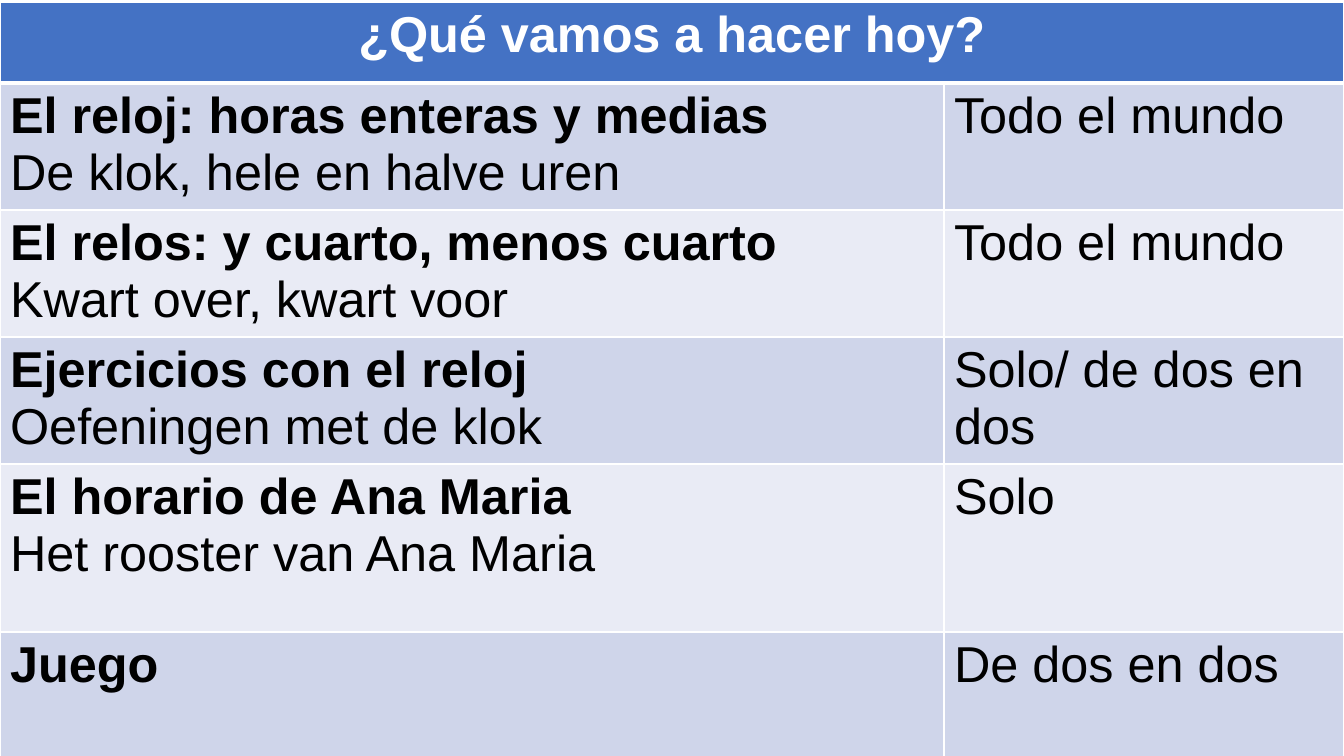
from lxml import etree
from pptx import Presentation
from pptx.dml.color import RGBColor
from pptx.enum.text import PP_ALIGN
from pptx.oxml.ns import qn
from pptx.util import Pt

CENTER, LEFT = PP_ALIGN.CENTER, PP_ALIGN.LEFT
PX = 9525  # EMU per px, 96 px to the inch
SLIDE_WIDTH, SLIDE_HEIGHT = 1280, 720
BLANK_LAYOUT = 6

WHITE, BLACK = "FFFFFF", "000000"
HEADER_FILL = "4472C4"
BAND_FILLS = ("CFD5EA", "E9EBF5")
THIN, THICK = 1, 3  # border widths in points

COLUMN_WIDTHS = (899, 381)
ROW_HEIGHTS = (77, 121, 121, 121, 160, 150)
TABLE_TOP = 2

HEADING = "¿Qué vamos a hacer hoy?"
# Spanish activity, Dutch translation, who takes part
ACTIVITIES = (
    ("El reloj: horas enteras y medias", "De klok, hele en halve uren", "Todo el mundo"),
    ("El relos: y cuarto, menos cuarto", "Kwart over, kwart voor", "Todo el mundo"),
    ("Ejercicios con el reloj", "Oefeningen met de klok", "Solo/ de dos en dos"),
    ("El horario de Ana Maria", "Het rooster van Ana Maria", "Solo"),
    ("Juego", None, "De dos en dos"),
)


def px(length):
    return length * PX


def rgb(value):
    return RGBColor.from_string(value)


def set_borders(cell, top, bottom):
    properties = cell._tc.get_or_add_tcPr()
    for side, width in (("L", THIN), ("R", THIN), ("T", top), ("B", bottom)):
        line = etree.SubElement(properties, qn(f"a:ln{side}"), w=str(Pt(width)))
        fill = etree.SubElement(line, qn("a:solidFill"))
        etree.SubElement(fill, qn("a:srgbClr"), val=WHITE)


def style_cell(cell, fill, top=THIN, bottom=THIN):
    set_borders(cell, top, bottom)
    cell.fill.solid()
    cell.fill.fore_color.rgb = rgb(fill)


def write_lines(cell, lines, color=BLACK, align=LEFT):
    """Fill a cell with (text, bold) lines, one paragraph each."""
    cell.text = "\n".join(text for text, _ in lines)
    for paragraph, (_, bold) in zip(cell.text_frame.paragraphs, lines):
        paragraph.alignment = align
        paragraph.font.name = "Arial"
        paragraph.font.size = Pt(36)
        paragraph.font.bold = bold
        paragraph.font.color.rgb = rgb(color)


def add_agenda(slide):
    agenda = slide.shapes.add_table(
        len(ROW_HEIGHTS), len(COLUMN_WIDTHS),
        0, px(TABLE_TOP), px(sum(COLUMN_WIDTHS)), px(sum(ROW_HEIGHTS)),
    ).table
    for column, width in zip(agenda.columns, COLUMN_WIDTHS):
        column.width = px(width)
    for row, height in zip(agenda.rows, ROW_HEIGHTS):
        row.height = px(height)

    # Heading across both columns
    heading = agenda.cell(0, 0)
    heading.merge(agenda.cell(0, 1))
    for cell in agenda.rows[0].cells:
        style_cell(cell, HEADER_FILL, bottom=THICK)
    write_lines(heading, [(HEADING, True)], WHITE, CENTER)

    # Activities in alternating bands
    for index, (spanish, dutch, participants) in enumerate(ACTIVITIES):
        activity_cell, participants_cell = agenda.rows[index + 1].cells
        for cell in (activity_cell, participants_cell):
            style_cell(cell, BAND_FILLS[index % 2], top=THIN if index else THICK)
        lines = [(spanish, True)]
        if dutch:
            lines.append((dutch, False))
        write_lines(activity_cell, lines)
        write_lines(participants_cell, [(participants, False)])


def main():
    presentation = Presentation()
    presentation.slide_width = px(SLIDE_WIDTH)
    presentation.slide_height = px(SLIDE_HEIGHT)
    slide = presentation.slides.add_slide(presentation.slide_layouts[BLANK_LAYOUT])
    add_agenda(slide)
    presentation.save("out.pptx")


if __name__ == "__main__":
    main()
